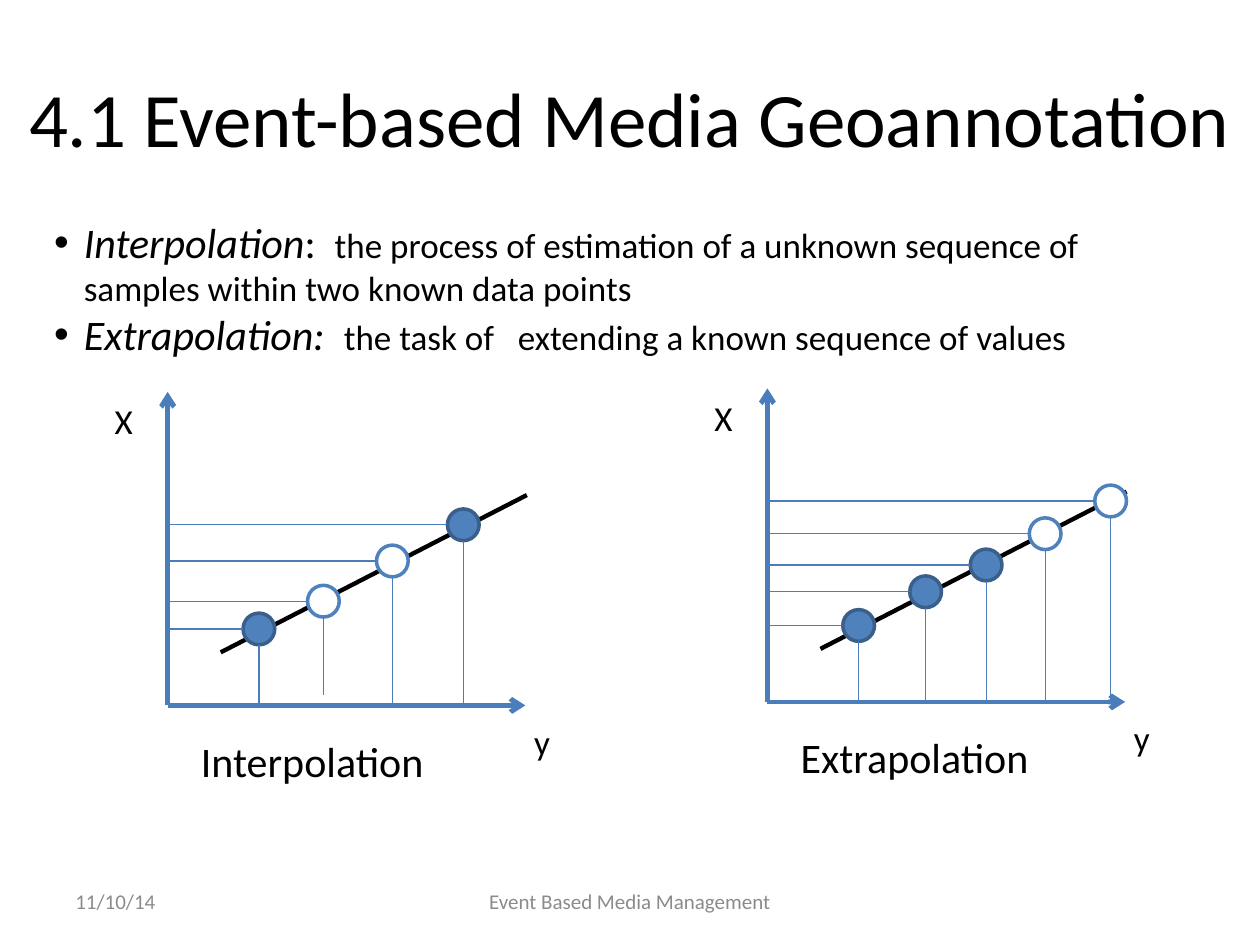
from pptx import Presentation
from pptx.dml.color import RGBColor
from pptx.enum.shapes import MSO_CONNECTOR, MSO_SHAPE
from pptx.enum.text import MSO_ANCHOR, PP_ALIGN
from pptx.oxml.ns import qn
from pptx.util import Cm, Pt
from lxml import etree

BLACK = RGBColor(0x00, 0x00, 0x00)
WHITE = RGBColor(0xFF, 0xFF, 0xFF)
GREY = RGBColor(0x8B, 0x8B, 0x8B)
BLUE = RGBColor(0x4F, 0x81, 0xBD)
DARK_BLUE = RGBColor(0x3A, 0x5F, 0x8B)
AXIS_BLUE = RGBColor(0x4A, 0x7E, 0xBB)

STRAIGHT = MSO_CONNECTOR.STRAIGHT
MARKER = MSO_SHAPE.FLOWCHART_CONNECTOR
TOP, MIDDLE = MSO_ANCHOR.TOP, MSO_ANCHOR.MIDDLE
LEFT, CENTER = PP_ALIGN.LEFT, PP_ALIGN.CENTER
LAYOUT_TITLE_ONLY = 5
DIAMETER = 0.64

DEFINITIONS = [
    [("Interpolation", 24, True), (":  ", 24, False),
     ("the process of estimation of a unknown sequence of samples "
      "within two known data points", 20, False)],
    [("Extrapolation:  ", 24, True),
     ("the task of   extending a known sequence of values", 20, False)],
]
INTERPOLATION = [(1.84, 1.54, True, 0), (3.14, 2.1, False, 0.2),
                 (4.53, 2.91, False, 0), (5.96, 3.64, True, 0)]
EXTRAPOLATION = [(1.84, 1.54, True, 0), (3.19, 2.22, True, 0),
                 (4.41, 2.76, True, 0), (5.6, 3.39, False, 0),
                 (6.92, 4.05, False, 0)]


def add_run(paragraph, text, size, color=BLACK, italic=False):
    """Append a formatted run to a paragraph."""
    run = paragraph.add_run()
    run.text = text
    formats = {"name": "Calibri", "size": Pt(size), "italic": italic}
    for attribute, value in formats.items():
        setattr(run.font, attribute, value)
    run.font.color.rgb = color


def add_label(slide, box, text, size, color=BLACK, align=LEFT, anchor=TOP, wrap=False):
    """Place a one-line text in a box given in centimetres."""
    frame = slide.shapes.add_textbox(*map(Cm, box)).text_frame
    for attribute, value in {"word_wrap": wrap, "vertical_anchor": anchor}.items():
        setattr(frame, attribute, value)
    frame.paragraphs[0].alignment = align
    add_run(frame.paragraphs[0], text, size, color)


def add_line(slide, start, end, color, width, arrow=False):
    """Draw a straight line between two points in centimetres."""
    line = slide.shapes.add_connector(STRAIGHT, *map(Cm, (*start, *end)))
    line.line.color.rgb = color
    line.line.width = Pt(width)
    if arrow:
        etree.SubElement(line.line._get_or_add_ln(), qn("a:tailEnd"), type="arrow")
    etree.SubElement(line._element.spPr, qn("a:effectLst"))


def add_marker(slide, x, y, known):
    """Draw a data point, filled when its value is known."""
    corner = (x - DIAMETER / 2, y - DIAMETER / 2)
    marker = slide.shapes.add_shape(MARKER, *map(Cm, (*corner, DIAMETER, DIAMETER)))
    marker.shadow.inherit = False
    marker.fill.solid()
    marker.fill.fore_color.rgb = BLUE if known else WHITE
    marker.line.color.rgb = DARK_BLUE if known else BLUE
    marker.line.width = Pt(2)


def add_title(slide, box, text):
    """Move and fill the title placeholder."""
    title = slide.shapes.title
    for attribute, value in zip(("left", "top", "width", "height"), box):
        setattr(title, attribute, Cm(value))
    title.text_frame.vertical_anchor = MIDDLE
    title.text_frame.paragraphs[0].alignment = CENTER
    add_run(title.text_frame.paragraphs[0], text, 44)


def add_definitions(slide, box, definitions):
    """Write the bulleted definitions."""
    frame = slide.shapes.add_textbox(*map(Cm, box)).text_frame
    frame.word_wrap = True
    for index, runs in enumerate(definitions):
        paragraph = frame.add_paragraph() if index else frame.paragraphs[0]
        properties = paragraph._p.get_or_add_pPr()
        properties.set("marL", str(Cm(0.6)))
        properties.set("indent", str(-Cm(0.6)))
        etree.SubElement(properties, qn("a:buFont"), typeface="Arial")
        etree.SubElement(properties, qn("a:buChar"), char="•")
        for text, size, italic in runs:
            add_run(paragraph, text, size, italic=italic)


def add_diagram(slide, box, caption, points):
    """Draw axes, trend, data points and guides in the box of the axes."""
    left, top, width, height = box
    bottom = top + height
    origin = (left, bottom)
    add_line(slide, origin, (left, top), AXIS_BLUE, 2.75, arrow=True)
    add_line(slide, origin, (left + width, bottom), AXIS_BLUE, 2.75, arrow=True)
    add_line(slide, (left + 1.07, bottom - 1.07), (left + 7.24, bottom - 4.24), BLACK, 2.5)
    radius = DIAMETER / 2
    for across, up, known, foot in points:
        x, y = left + across, bottom - up
        add_marker(slide, x, y, known)
        add_line(slide, (x, bottom - foot), (x, y + radius), AXIS_BLUE, 0.75)
        add_line(slide, (x - radius, y), (left, y), AXIS_BLUE, 0.75)
    add_label(slide, (left - 1.32, top + 0.03, 1, 1.1), "X", 20)
    add_label(slide, (left + width - 0.07, bottom + 0.17, 0.9, 1.1), "y", 20)
    add_label(slide, (left + 0.42, bottom + 0.48, 6, 1.27), caption, 24)


def add_footer(slide, box, date, text):
    """Write the date at the left and the footer text in the middle."""
    left, top, width, height = box
    style = {"size": 12, "color": GREY, "anchor": MIDDLE, "wrap": True}
    add_label(slide, (left, top, 5.93, height), date, **style)
    add_label(slide, (left + (width - 8.05) / 2, top, 8.05, height), text,
              align=CENTER, **style)


def main():
    """Build and save the slide."""
    deck = Presentation()
    deck.slide_width, deck.slide_height = Cm(25.4), Cm(19.05)
    slide = deck.slides.add_slide(deck.slide_layouts[LAYOUT_TITLE_ONLY])
    add_title(slide, (0, 0.76, 25.4, 3.18), "4.1 Event-based Media Geoannotation")
    add_definitions(slide, (0.84, 4.24, 22.23, 13.54), DEFINITIONS)
    add_diagram(slide, (3.38, 7.9, 7.21, 6.32), "Interpolation", INTERPOLATION)
    add_diagram(slide, (15.47, 7.83, 7.21, 6.32), "Extrapolation", EXTRAPOLATION)
    add_footer(slide, (1.27, 17.65, 22.86, 1.02), "11/10/14",
               "Event Based Media Management")
    deck.save("out.pptx")


if __name__ == "__main__":
    main()
